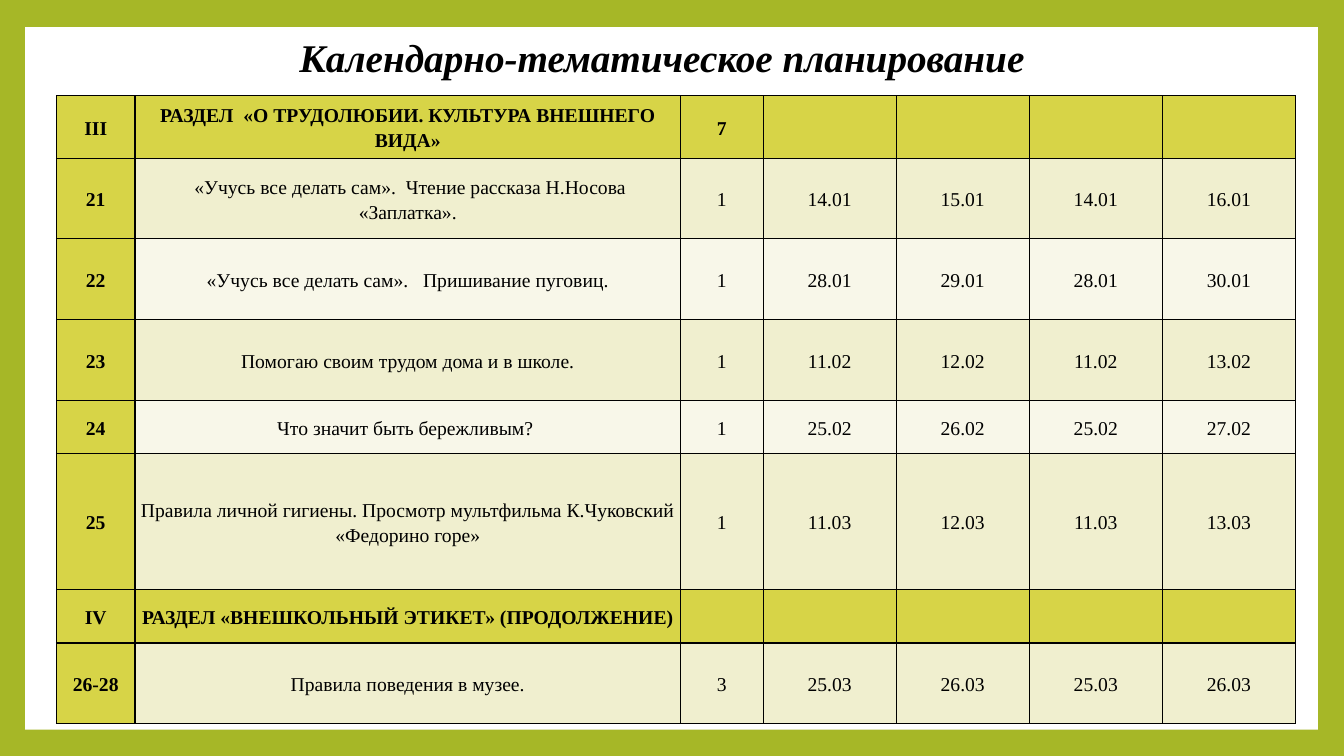
from lxml.etree import SubElement
from pptx import Presentation
from pptx.dml.color import RGBColor
from pptx.enum.shapes import MSO_SHAPE
from pptx.enum.text import MSO_ANCHOR, PP_ALIGN
from pptx.oxml.ns import qn
from pptx.util import Inches, Pt

# Content: number, topic, hours, four lesson dates
TITLE = "Календарно-тематическое планирование"
ROWS = [
    ("III", "РАЗДЕЛ  «О ТРУДОЛЮБИИ. КУЛЬТУРА ВНЕШНЕГО ВИДА»", "7", "", "", "", ""),
    ("21", " «Учусь все делать сам».  Чтение рассказа Н.Носова «Заплатка».", "1",
     "14.01", "15.01", "14.01", "16.01"),
    ("22", "«Учусь все делать сам».   Пришивание пуговиц.", "1",
     "28.01", "29.01", "28.01", "30.01"),
    ("23", "Помогаю своим трудом дома и в школе.", "1",
     "11.02", "12.02", "11.02", "13.02"),
    ("24", "Что значит быть бережливым? ", "1",
     "25.02", "26.02", "25.02", "27.02"),
    ("25", "Правила личной гигиены. Просмотр мультфильма К.Чуковский «Федорино горе»", "1",
     "11.03", "12.03", "11.03", "13.03"),
    ("IV", "РАЗДЕЛ «ВНЕШКОЛЬНЫЙ ЭТИКЕТ» (ПРОДОЛЖЕНИЕ)", "", "", "", "", ""),
    ("26-28", "Правила поведения в музее.", "3",
     "25.03", "26.03", "25.03", "26.03"),
]
SECTIONS = ("III", "IV")
COLUMN_WIDTHS = [0.78, 5.41, 0.82] + [1.32] * 4
ROW_HEIGHTS = [0.62, 0.8, 0.8, 0.8, 0.53, 1.35, 0.53, 0.8]

FONT = "Times New Roman"
GREEN = RGBColor(0xA6, 0xB7, 0x27)
WHITE = RGBColor(0xFF, 0xFF, 0xFF)
BLACK = RGBColor(0x00, 0x00, 0x00)
SECTION_FILL = RGBColor(0xD7, 0xD4, 0x47)
ODD_FILL = RGBColor(0xF0, 0xEF, 0xCF)
EVEN_FILL = RGBColor(0xF8, 0xF7, 0xE9)


def write(text_frame, text, size, bold, italic, spacing):
    paragraph = text_frame.paragraphs[0]
    paragraph.alignment = PP_ALIGN.CENTER
    paragraph.line_spacing = spacing
    if text:
        run = paragraph.add_run()
        run.text = text
        font = run.font
        font.name, font.size = FONT, Pt(size)
        font.bold, font.italic = bold, italic
        font.color.rgb = BLACK


def add_borders(cell):
    properties = cell._tc.get_or_add_tcPr()
    for side in ("a:lnL", "a:lnR", "a:lnT", "a:lnB"):
        line = SubElement(properties, qn(side), w=str(Pt(1)))
        fill = SubElement(line, qn("a:solidFill"))
        SubElement(fill, qn("a:srgbClr"), val=str(BLACK))


presentation = Presentation()
presentation.slide_width = Inches(13.33)
presentation.slide_height = Inches(7.5)
slide = presentation.slides.add_slide(presentation.slide_layouts[5])

# Green frame around a white panel, behind everything else
slide.background.fill.solid()
slide.background.fill.fore_color.rgb = GREEN
panel = slide.shapes.add_shape(
    MSO_SHAPE.RECTANGLE, Inches(0.25), Inches(0.27), Inches(12.82), Inches(6.97))
panel.shadow.inherit = False
panel.fill.solid()
panel.fill.fore_color.rgb = WHITE
panel.line.fill.background()
panel.element.getparent().insert(2, panel.element)

# Title
title = slide.shapes.title
title.left, title.top = Inches(1.94), Inches(0.24)
title.width, title.height = Inches(9.25), Inches(0.71)
title.text_frame.vertical_anchor = MSO_ANCHOR.MIDDLE
write(title.text_frame, TITLE, 28, True, True, 0.9)

# Lesson table
table = slide.shapes.add_table(
    len(ROWS), len(COLUMN_WIDTHS), Inches(0.56), Inches(0.95),
    Inches(sum(COLUMN_WIDTHS)), Inches(sum(ROW_HEIGHTS))).table
for column, width in zip(table.columns, COLUMN_WIDTHS):
    column.width = Inches(width)
for row, height in zip(table.rows, ROW_HEIGHTS):
    row.height = Inches(height)

for row_index, values in enumerate(ROWS):
    is_section = values[0] in SECTIONS
    band_fill = ODD_FILL if row_index % 2 else EVEN_FILL
    for column_index, text in enumerate(values):
        highlighted = is_section or column_index == 0
        cell = table.cell(row_index, column_index)
        cell.vertical_anchor = MSO_ANCHOR.MIDDLE
        cell.margin_left = cell.margin_right = Inches(0.05)
        cell.margin_top = cell.margin_bottom = 0
        add_borders(cell)
        cell.fill.solid()
        cell.fill.fore_color.rgb = SECTION_FILL if highlighted else band_fill
        write(cell.text_frame, text, 14, highlighted, False, 1.15)

presentation.save("out.pptx")
